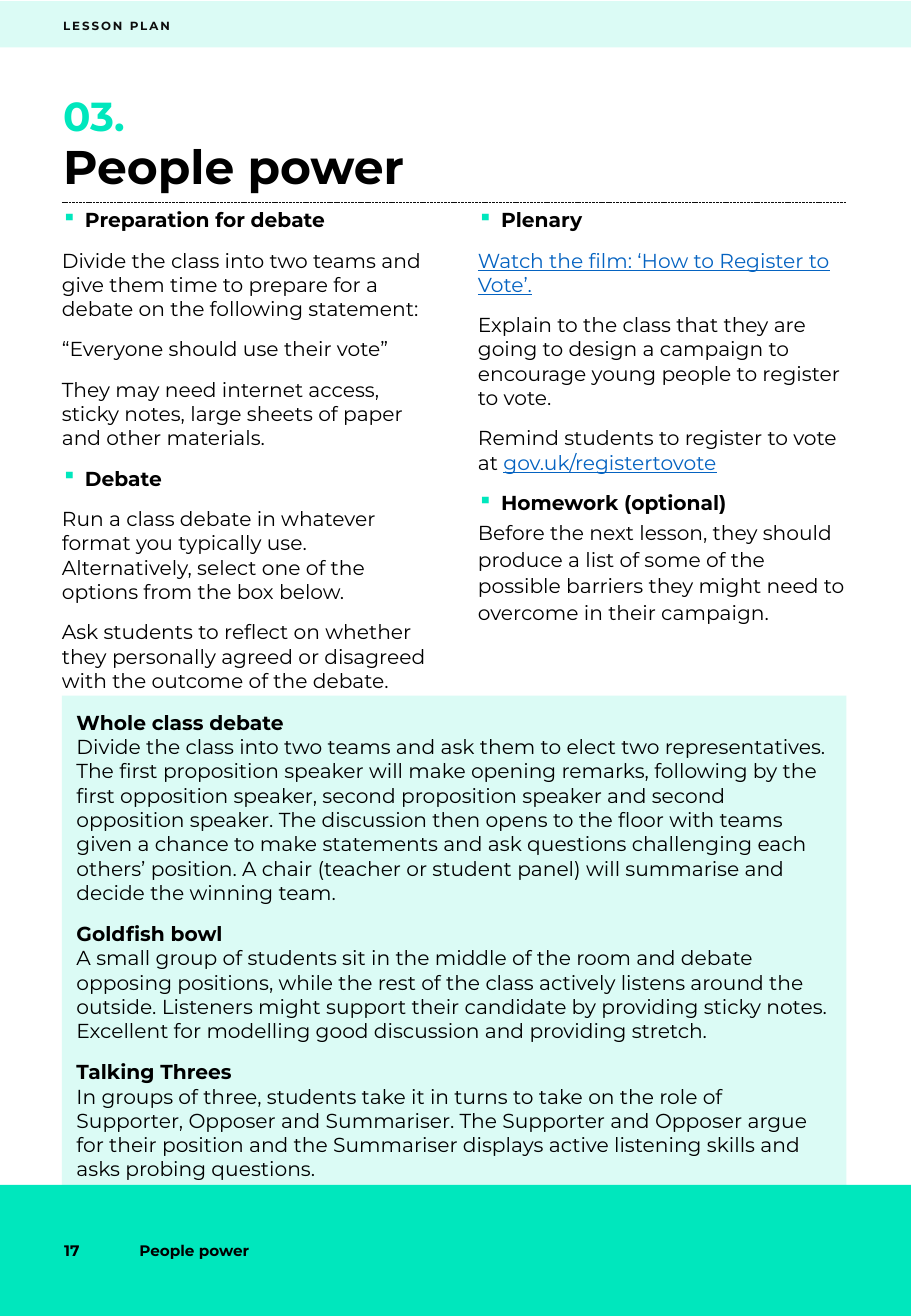
import pptx
import pptx.util
import pptx.dml.color
import pptx.enum.dml
import pptx.enum.shapes
import pptx.enum.text
import pptx.oxml.ns
from dataclasses import dataclass
from lxml import etree

Pt = pptx.util.Pt
qn = pptx.oxml.ns.qn
ANCHOR = pptx.enum.text.MSO_ANCHOR

SLIDE_WIDTH = pptx.util.Inches(7.5)
SLIDE_HEIGHT = pptx.util.Inches(10.84)
COLUMNS, ROWS = 750, 1084
MARGIN, CONTENT_WIDTH = 51, 646
FOOTER_TOP, FOOTER_ROWS = 976, 108


@dataclass(frozen=True)
class Theme:
    font: str = "Montserrat"
    accent: str = "00E7BD"
    text: str = "000000"
    soft_text: str = "0D0D0D"
    link: str = "0563C1"
    tint: int = 14
    title_size: int = 28
    number_size: int = 24
    body_size: int = 12
    footer_size: int = 9
    label_size: int = 7


THEME = Theme()

LESSON_STEPS = [
    ("heading", "Preparation for debate"),
    ("body", "Divide the class into two teams and give them time to prepare for a debate on the following statement:"),
    ("body", "“Everyone should use their vote”"),
    ("body", "They may need internet access, sticky notes, large sheets of paper and other materials."),
    ("heading", "Debate"),
    ("body", "Run a class debate in whatever format you typically use. Alternatively, select one of the options from the box below."),
    ("body", "Ask students to reflect on whether they personally agreed or disagreed with the outcome of the debate."),
    ("heading", "Plenary"),
    ("link", "Watch the film: ‘How to Register to Vote’."),
    ("body", "Explain to the class that they are going to design a campaign to encourage young people to register to vote."),
    ("body", "Remind students to register to vote at ", "gov.uk/registertovote"),
    ("heading", "Homework (optional)"),
    ("homework", "Before the next lesson, they should produce a list of some of the possible barriers they might need to overcome in their campaign."),
]

DEBATE_OPTIONS = [
    ("Whole class debate",
     "Divide the class into two teams and ask them to elect two representatives. The first proposition speaker will make opening remarks, following by the first opposition speaker, second proposition speaker and second opposition speaker. The discussion then opens to the floor with teams given a chance to make statements and ask questions challenging each others’ position. A chair (teacher or student panel) will summarise and decide the winning team."),
    ("Goldfish bowl",
     "A small group of students sit in the middle of the room and debate opposing positions, while the rest of the class actively listens around the outside. Listeners might support their candidate by providing sticky notes. Excellent for modelling good discussion and providing stretch."),
    ("Talking Threes",
     "In groups of three, students take it in turns to take on the role of Supporter, Opposer and Summariser. The Supporter and Opposer argue for their position and the Summariser displays active listening skills and asks probing questions."),
]


def across(columns):
    return round(SLIDE_WIDTH * columns / COLUMNS)


def down(rows):
    return round(SLIDE_HEIGHT * rows / ROWS)


def place(left, top, width, height):
    return across(left), down(top), across(width), down(height)


def rgb(color):
    return pptx.dml.color.RGBColor.from_string(color)


def write(paragraph, text, size=THEME.body_size, color=THEME.text,
          bold=False, underline=False, tracking=None):
    run = paragraph.add_run()
    run.text = text
    font = run.font
    font.name, font.size = THEME.font, Pt(size)
    font.bold, font.underline = bold, underline
    font.color.rgb = rgb(color)
    if tracking:
        run._r.get_or_add_rPr().set("spc", str(round(tracking * 100)))


def next_paragraph(frame, index, before=0, after=2, line=None):
    paragraph = frame.add_paragraph() if index else frame.paragraphs[0]
    paragraph.space_before = Pt(before if index else 0)
    paragraph.space_after = Pt(after)
    if line:
        paragraph.line_spacing = line
    return paragraph


def add_bullet(paragraph):
    properties = paragraph._p.get_or_add_pPr()
    properties.set("marL", str(across(19)))
    properties.set("indent", str(-across(19)))
    bullet_color = etree.SubElement(properties, qn("a:buClr"))
    etree.SubElement(bullet_color, qn("a:srgbClr"), val=THEME.accent)
    etree.SubElement(properties, qn("a:buChar"), char="▪")


def set_insets(frame, inset):
    frame.margin_left = frame.margin_right = across(inset)
    frame.margin_top = frame.margin_bottom = down(inset)


def add_frame(slide, area, inset=0, anchor=ANCHOR.TOP):
    frame = slide.shapes.add_textbox(*place(*area)).text_frame
    frame.word_wrap = True
    frame.vertical_anchor = anchor
    set_insets(frame, inset)
    return frame


def add_label(slide, area, text, inset=0, anchor=ANCHOR.TOP, line=None, **style):
    frame = add_frame(slide, area, inset, anchor)
    write(next_paragraph(frame, 0, after=0, line=line), text, bold=True, **style)


def add_band(slide, area, tint=None):
    band = slide.shapes.add_shape(
        pptx.enum.shapes.MSO_SHAPE.RECTANGLE, *place(*area))
    band.shadow.inherit = False
    band.line.fill.background()
    band.fill.solid()
    band.fill.fore_color.rgb = rgb(THEME.accent)
    if tint:
        fill_color = band._element.spPr.find(qn("a:solidFill"))[0]
        etree.SubElement(fill_color, qn("a:alpha"), val=str(tint * 1000))
    return band


def add_debate_panel(slide):
    panel = add_band(slide, (MARGIN, 573, CONTENT_WIDTH, 415), THEME.tint)
    frame = panel.text_frame
    frame.word_wrap = True
    frame.auto_size = pptx.enum.text.MSO_AUTO_SIZE.SHAPE_TO_FIT_TEXT
    frame.vertical_anchor = ANCHOR.TOP
    set_insets(frame, 12)
    for index, (option, description) in enumerate(DEBATE_OPTIONS):
        paragraph = next_paragraph(frame, index, before=8)
        paragraph.alignment = pptx.enum.text.PP_ALIGN.LEFT
        write(paragraph, option, bold=True)
        paragraph.add_line_break()
        write(paragraph, description)


def add_title_rule(slide):
    rule = slide.shapes.add_connector(
        pptx.enum.shapes.MSO_CONNECTOR.STRAIGHT,
        across(MARGIN), down(167), across(MARGIN + CONTENT_WIDTH), down(167))
    rule.line.color.rgb = rgb(THEME.soft_text)
    rule.line.width = Pt(0.5)
    rule.line.dash_style = pptx.enum.dml.MSO_LINE.SQUARE_DOT
    etree.SubElement(rule._element.spPr, qn("a:effectLst"))


def add_lesson_steps(slide):
    frame = add_frame(slide, (MARGIN, 171, CONTENT_WIDTH, 417))
    body = frame._txBody.bodyPr
    body.set("numCol", "2")
    body.set("spcCol", str(across(39)))
    link_style = dict(color=THEME.link, underline=True)
    for index, (role, text, *links) in enumerate(LESSON_STEPS):
        homework = role == "homework"
        paragraph = next_paragraph(frame, index, before=0 if homework else 7.5,
                                   line=1.1 if homework else None)
        if role == "heading":
            add_bullet(paragraph)
        write(paragraph, text, bold=role == "heading",
              **(link_style if role == "link" else {}))
        for link in links:
            write(paragraph, link, **link_style)


def main():
    deck = pptx.Presentation()
    deck.slide_width, deck.slide_height = SLIDE_WIDTH, SLIDE_HEIGHT
    slide = deck.slides.add_slide(deck.slide_layouts[6])

    add_band(slide, (0, FOOTER_TOP, COLUMNS, FOOTER_ROWS))
    add_band(slide, (0, 1, COLUMNS, 38), THEME.tint)
    add_label(slide, (52, 118, CONTENT_WIDTH, 88), "People power",
              line=0.9, size=THEME.title_size)
    for left, width, text in ((105, 277, "People power"), (43, 62, "17")):
        add_label(slide, (left, FOOTER_TOP, width, FOOTER_ROWS), text,
                  inset=10, anchor=ANCHOR.MIDDLE, size=THEME.footer_size)
    add_label(slide, (52, 75, CONTENT_WIDTH, 37), "03.",
              size=THEME.number_size, color=THEME.accent)
    add_label(slide, (52, 7, 270, 28), "LESSON PLAN", anchor=ANCHOR.MIDDLE,
              size=THEME.label_size, color=THEME.soft_text, tracking=1.2)
    add_debate_panel(slide)
    add_title_rule(slide)
    add_lesson_steps(slide)
    deck.save("out.pptx")


if __name__ == "__main__":
    main()
